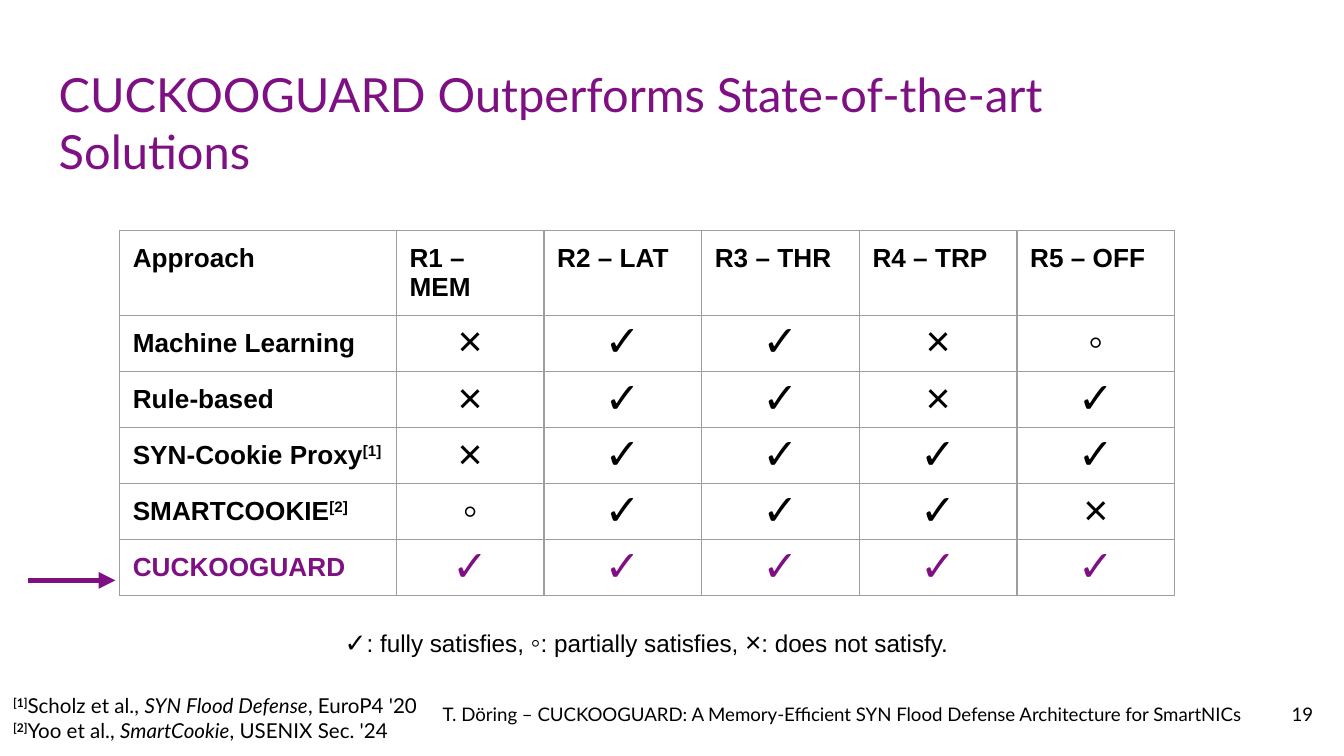
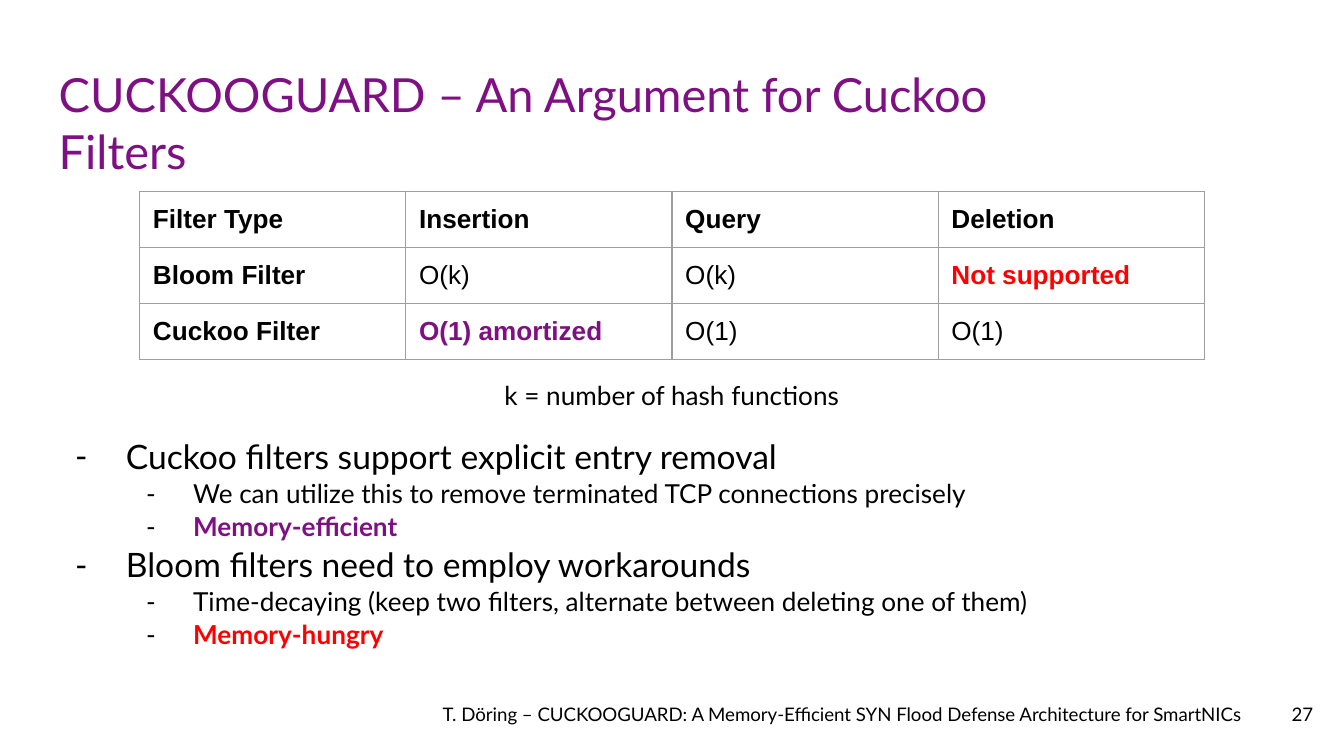
from lxml.etree import SubElement
from pptx import Presentation
from pptx.dml.color import RGBColor
from pptx.enum.shapes import MSO_CONNECTOR
from pptx.enum.text import MSO_ANCHOR as Anchor, MSO_AUTO_SIZE as AutoSize, PP_ALIGN as Align
from pptx.oxml.ns import qn
from pptx.util import Cm, Pt

PURPLE, RED, BLACK, GREY = "7E1083", "FF0000", "000000", "9E9E9E"
SANS, TABLE_FONT = "Lato", "Arial"
INSET, MARK_INSET = 0.25, 0.05
ROW_HEIGHT = 1.06
TITLE_ONLY, TITLE_AND_BODY = 5, 1

# A span is (text, style); the style keys are the options of add_span.
BOLD = {"bold": True}
RAISED = {"bold": True, "raised": True}
GOOD = {"bold": True, "color": PURPLE}
BAD = {"bold": True, "color": RED}

FOOTER = "T. Döring – CUCKOOGUARD: A Memory-Efficient SYN Flood Defense Architecture for SmartNICs"

COMPARISON_TITLE = "CUCKOOGUARD Outperforms State-of-the-art Solutions"
REQUIREMENTS = ["Approach", "R1 – MEM", "R2 – LAT", "R3 – THR", "R4 – TRP", "R5 – OFF"]
APPROACHES = [
    ([("Machine Learning", BOLD)], "×✓✓×◦", BLACK),
    ([("Rule-based", BOLD)], "×✓✓×✓", BLACK),
    ([("SYN-Cookie Proxy", BOLD), ("[1]", RAISED)], "×✓✓✓✓", BLACK),
    ([("SMARTCOOKIE", BOLD), ("[2]", RAISED)], "◦✓✓✓×", BLACK),
    ([("CUCKOOGUARD", GOOD)], "✓✓✓✓✓", PURPLE),
]
LEGEND = [("✓", 14, "fully satisfies, "), ("◦", 15, "partially satisfies, "),
          ("×", 15, "does not satisfy.")]
REFERENCES = [
    ("[1]", "Scholz et al., ", "SYN Flood Defense", ", EuroP4 '20"),
    ("[2]", "Yoo et al., ", "SmartCookie", ", USENIX Sec. '24"),
]

FILTER_TITLE = "CUCKOOGUARD – An Argument for Cuckoo Filters"
FILTERS = [
    [("Filter Type", BOLD), ("Insertion", BOLD), ("Query", BOLD), ("Deletion", BOLD)],
    [("Bloom Filter", BOLD), ("O(k)", {}), ("O(k)", {}), ("Not supported", BAD)],
    [("Cuckoo Filter", BOLD), ("O(1) amortized", GOOD), ("O(1)", {}), ("O(1)", {})],
]
FILTER_NOTE = "k = number of hash functions"
ARGUMENTS = [
    (0, "Cuckoo filters support explicit entry removal", {}),
    (1, "We can utilize this to remove terminated TCP connections precisely", {}),
    (1, "Memory-efficient", GOOD),
    (0, "Bloom filters need to employ workarounds", {}),
    (1, "Time-decaying (keep two filters, alternate between deleting one of them)", {}),
    (1, "Memory-hungry", BAD),
]
# Size in points, left margin and hanging indent in centimetres, by level
LEVELS = [(18, 1.27, 0.96), (14, 2.54, 0.89)]


def rgb(value):
    return RGBColor.from_string(value)


def add_span(para, text, size, font=SANS, color=BLACK, bold=False, italic=False, raised=False):
    span = para.add_run()
    span.text = text
    span.font.name = font
    span.font.size = Pt(size)
    span.font.color.rgb = rgb(color)
    span.font.bold = bold
    span.font.italic = italic
    if raised:
        span.font._element.set("baseline", "30000")


def set_insets(target, inset):
    """Give a text frame or a table cell the same margin on all sides."""
    target.margin_left = target.margin_right = Cm(inset)
    target.margin_top = target.margin_bottom = Cm(inset)


def prepare_frame(shape, anchor=Anchor.TOP):
    frame = shape.text_frame
    frame.word_wrap = True
    frame.auto_size = AutoSize.NONE
    frame.vertical_anchor = anchor
    set_insets(frame, INSET)
    return frame


def place(shape, left, top, width, height):
    shape.left, shape.top = Cm(left), Cm(top)
    shape.width, shape.height = Cm(width), Cm(height)


def add_box(slide, area, align=Align.LEFT, anchor=Anchor.TOP):
    """Add a text box and return its frame; area is left, top, width, height."""
    frame = prepare_frame(slide.shapes.add_textbox(*map(Cm, area)), anchor)
    frame.paragraphs[0].alignment = align
    return frame


def add_page(deck, layout, title, number):
    """Add a slide with the shared title style, footer and page number."""
    page = deck.slides.add_slide(deck.slide_layouts[layout])
    place(page.shapes.title, 0.86, 0.99, 19.38, 1.6)
    para = prepare_frame(page.shapes.title).paragraphs[0]
    para.alignment = Align.LEFT
    add_span(para, title, 25.2, color=PURPLE)
    footer = add_box(page, (6.83, 13.03, 16.87, 0.91), Align.RIGHT)
    add_span(footer.paragraphs[0], FOOTER, 10)
    counter = add_box(page, (22.83, 12.95, 2.24, 1.09), Align.RIGHT, Anchor.MIDDLE)
    add_span(counter.paragraphs[0], str(number), 10)
    return page


def add_borders(cell):
    properties = cell._tc.get_or_add_tcPr()
    for side in ("lnL", "lnR", "lnT", "lnB"):
        line = SubElement(properties, qn(f"a:{side}"), w=str(Pt(0.75)))
        fill = SubElement(line, qn("a:solidFill"))
        SubElement(fill, qn("a:srgbClr"), val=GREY)


def add_grid(page, left, top, widths, rows):
    """Add a bordered table; each cell is a list of spans, and a lone symbol is centred."""
    frame = page.shapes.add_table(len(rows), len(widths), Cm(left), Cm(top),
                                  Cm(sum(widths)), Cm(ROW_HEIGHT * len(rows)))
    table = frame.table
    table.first_row = table.horz_banding = False
    for column, width in zip(table.columns, widths):
        column.width = Cm(width)
    for row, contents in zip(table.rows, rows):
        row.height = Cm(ROW_HEIGHT)
        for cell, spans in zip(row.cells, contents):
            is_mark = spans[0][0] in ("✓", "◦", "×")
            add_borders(cell)
            cell.fill.background()
            set_insets(cell, MARK_INSET if is_mark else INSET)
            para = cell.text_frame.paragraphs[0]
            para.alignment = Align.CENTER if is_mark else Align.LEFT
            for text, style in spans:
                add_span(para, text, 23 if is_mark else 14, TABLE_FONT, **style)


def add_arrow(page, start, end, top):
    arrow = page.shapes.add_connector(MSO_CONNECTOR.STRAIGHT, Cm(start), Cm(top), Cm(end), Cm(top))
    arrow.line.color.rgb = rgb(PURPLE)
    arrow.line.width = Pt(3)
    SubElement(arrow.line._get_or_add_ln(), qn("a:tailEnd"), type="triangle")
    SubElement(arrow._element.spPr, qn("a:effectLst"))


def add_bullet(para, level):
    size, margin, hanging = LEVELS[level]
    para.level = level
    properties = para._p.get_or_add_pPr()
    properties.set("marL", str(Cm(margin)))
    properties.set("indent", str(-Cm(hanging)))
    color = SubElement(properties, qn("a:buClr"))
    SubElement(color, qn("a:srgbClr"), val=BLACK)
    SubElement(properties, qn("a:buFont"), typeface=SANS)
    SubElement(properties, qn("a:buChar"), char="-")
    para.line_spacing = 1.05
    para.space_before = Pt(0)
    return size


def build_comparison(deck):
    page = add_page(deck, TITLE_ONLY, COMPARISON_TITLE, 19)
    rows = [[[(name, BOLD)] for name in REQUIREMENTS]]
    for label, marks, color in APPROACHES:
        rows.append([label] + [[(mark, {"color": color})] for mark in marks])
    add_grid(page, 2.26, 4.35, [5.23, 2.79] + [2.98] * 4, rows)

    legend = add_box(page, (2.64, 11.56, 19.15, 1.27), Align.CENTER).paragraphs[0]
    for mark, size, meaning in LEGEND:
        add_span(legend, mark, size, TABLE_FONT)
        add_span(legend, f": {meaning}", 13, TABLE_FONT)
    add_arrow(page, 0.53, 2.18, 10.97)

    frame = add_box(page, (0, 12.7, 16.41, 1.59), anchor=Anchor.BOTTOM)
    for index, (key, authors, work, venue) in enumerate(REFERENCES):
        para = frame.add_paragraph() if index else frame.paragraphs[0]
        add_span(para, key, 11, **RAISED)
        add_span(para, authors, 11)
        add_span(para, work, 11, italic=True)
        add_span(para, venue, 11)


def build_filters(deck):
    page = add_page(deck, TITLE_AND_BODY, FILTER_TITLE, 27)
    body = page.placeholders[1]
    place(body, 0.86, 7.95, 23.67, 4.75)
    frame = prepare_frame(body)
    for index, (level, text, style) in enumerate(ARGUMENTS):
        para = frame.add_paragraph() if index else frame.paragraphs[0]
        size = add_bullet(para, level)
        add_span(para, text, size, **style)

    add_grid(page, 2.64, 3.62, [5.03] * 4, [[[span] for span in row] for row in FILTERS])
    note = add_box(page, (2.64, 6.93, 20.12, 0.89), Align.CENTER)
    add_span(note.paragraphs[0], FILTER_NOTE, 14)


def main():
    deck = Presentation()
    deck.slide_width, deck.slide_height = Cm(25.4), Cm(14.29)
    build_comparison(deck)
    build_filters(deck)
    deck.save("out.pptx")


if __name__ == "__main__":
    main()
